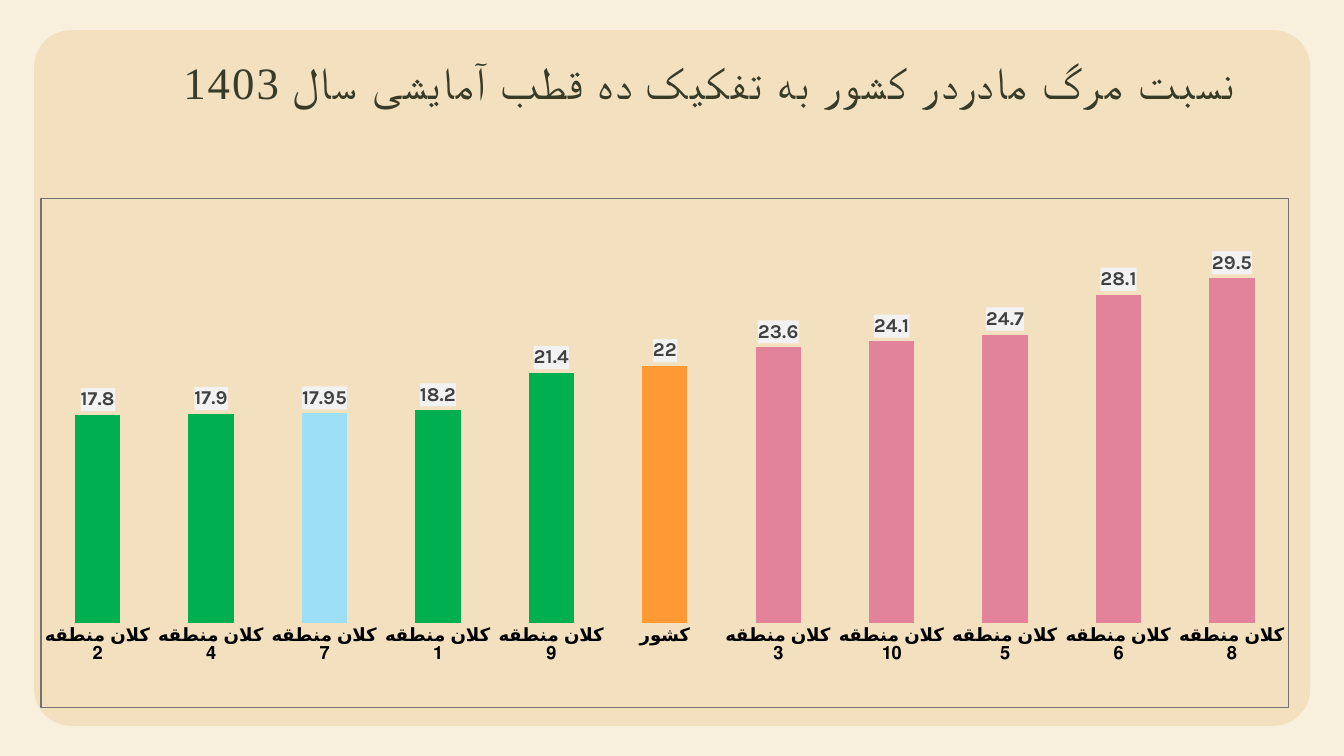
from lxml import etree
from pptx import Presentation
from pptx.chart.data import CategoryChartData
from pptx.dml.color import RGBColor
from pptx.enum import chart as ch, shapes, text
from pptx.oxml import parse_xml
from pptx.oxml.ns import nsdecls, qn
from pptx.util import Cm, Pt

GREEN, BLUE, ORANGE, PINK = "00B050", "9DE0F6", "FF9933", "E2829B"
REGION = "کلان منطقه"
BARS = [
    (f"{REGION} 2", 17.8, GREEN),
    (f"{REGION} 4", 17.9, GREEN),
    (f"{REGION} 7", 17.95, BLUE),
    (f"{REGION} 1", 18.2, GREEN),
    (f"{REGION} 9", 21.4, GREEN),
    ("کشور", 22, ORANGE),
    (f"{REGION} 3", 23.6, PINK),
    (f"{REGION} 10", 24.1, PINK),
    (f"{REGION} 5", 24.7, PINK),
    (f"{REGION} 6", 28.1, PINK),
    (f"{REGION} 8", 29.5, PINK),
]


def paint(fill, color):
    fill.solid()
    fill.fore_color.rgb = RGBColor.from_string(color)


def style(font, name, size, color, bold=False):
    font.name, font.size, font.bold = name, Pt(size), bold
    paint(font.fill, color)


def add_panel(slide, box, color):
    panel = slide.shapes.add_shape(shapes.MSO_SHAPE.ROUNDED_RECTANGLE, *box)
    panel.adjustments[0] = 0.053
    panel.shadow.inherit = False
    paint(panel.fill, color)
    panel.line.fill.background()


def add_title(slide, box, words):
    frame = slide.shapes.add_textbox(*box).text_frame
    frame.word_wrap = True
    frame.vertical_anchor = text.MSO_ANCHOR.BOTTOM
    para = frame.paragraphs[0]
    para.alignment = text.PP_ALIGN.CENTER
    para.line_spacing = 0.9
    para._p.get_or_add_pPr().set("rtl", "1")
    run = para.add_run()
    run.text = words
    style(run.font, "Times New Roman", 32, "373B27")
    props = run._r.get_or_add_rPr()
    props.set("spc", "150")
    props.set("lang", "fa-IR")
    etree.SubElement(props, qn("a:cs")).set("typeface", "Times New Roman")


def chart_xml(tag, body):
    return parse_xml(f"<c:{tag} {nsdecls('c', 'a')}>{body}</c:{tag}>")


def solid_xml(color):
    return f'<a:solidFill><a:srgbClr val="{color}"/></a:solidFill>'


def set_plot(chart, x, y, w, h):
    """Fix the inner plot area as fractions of the chart."""
    area = chart._chartSpace.chart.plotArea
    for old in area.findall(qn("c:layout")):
        area.remove(old)
    parts = {"layoutTarget": "inner", "xMode": "edge", "yMode": "edge",
             "x": x, "y": y, "w": w, "h": h}
    body = "".join(f'<c:{k} val="{v}"/>' for k, v in parts.items())
    area.insert(0, chart_xml("layout", f"<c:manualLayout>{body}</c:manualLayout>"))


def set_axes(chart):
    cat, val = chart.category_axis, chart.value_axis
    cat.major_tick_mark = cat.minor_tick_mark = ch.XL_TICK_MARK.NONE
    cat.has_major_gridlines = False
    cat.format.line.fill.background()
    style(cat.tick_labels.font, "Karla", 13, "000000", True)
    val.minimum_scale, val.maximum_scale = 0, 35
    val.has_major_gridlines = False
    val.visible = False


def add_labels(plot):
    plot.has_data_labels = True
    labels = plot.data_labels
    labels.show_value = True
    labels.position = ch.XL_LABEL_POSITION.OUTSIDE_END
    style(labels.font, "Karla", 14, "404040", True)
    back = chart_xml("spPr", solid_xml("F2F2F2"))
    labels._element.find(qn("c:txPr")).addprevious(back)


def add_bars(slide, box):
    names, values, colors = zip(*BARS)
    data = CategoryChartData()
    data.categories = names
    data.add_series("Series 1", values)
    kind = ch.XL_CHART_TYPE.COLUMN_CLUSTERED
    chart = slide.shapes.add_chart(kind, *box, data).chart
    chart.has_legend = chart.has_title = False
    style(chart.font, "Karla", 10, "000000")
    border = f'<a:noFill/><a:ln w="{Pt(0.75)}">{solid_xml("767171")}</a:ln>'
    chart._chartSpace.chart.addnext(chart_xml("spPr", border))
    set_plot(chart, 0, 0.03, 1, 0.805)
    set_axes(chart)
    plot = chart.plots[0]
    plot.gap_width, plot.vary_by_categories = 150, False
    series = plot.series[0]
    paint(series.format.fill, "CC3059")
    for i, color in enumerate(colors):
        paint(series.points[i].format.fill, color)
    add_labels(plot)


def main():
    deck = Presentation()
    deck.slide_width, deck.slide_height = Cm(33.87), Cm(19.05)
    slide = deck.slides.add_slide(deck.slide_layouts[6])
    paint(slide.background.fill, "F8EFDD")
    add_panel(slide, (Cm(0.86), Cm(0.76), Cm(32.16), Cm(17.53)), "F2E0BE")
    add_title(slide, (Cm(3.33), Cm(1.12), Cm(29.16), Cm(1.75)),
              "نسبت مرگ مادردر کشور به تفکیک ده قطب آمایشی سال 1403")
    add_bars(slide, (Cm(1.02), Cm(5), Cm(31.47), Cm(12.83)))
    deck.save("out.pptx")


if __name__ == "__main__":
    main()
